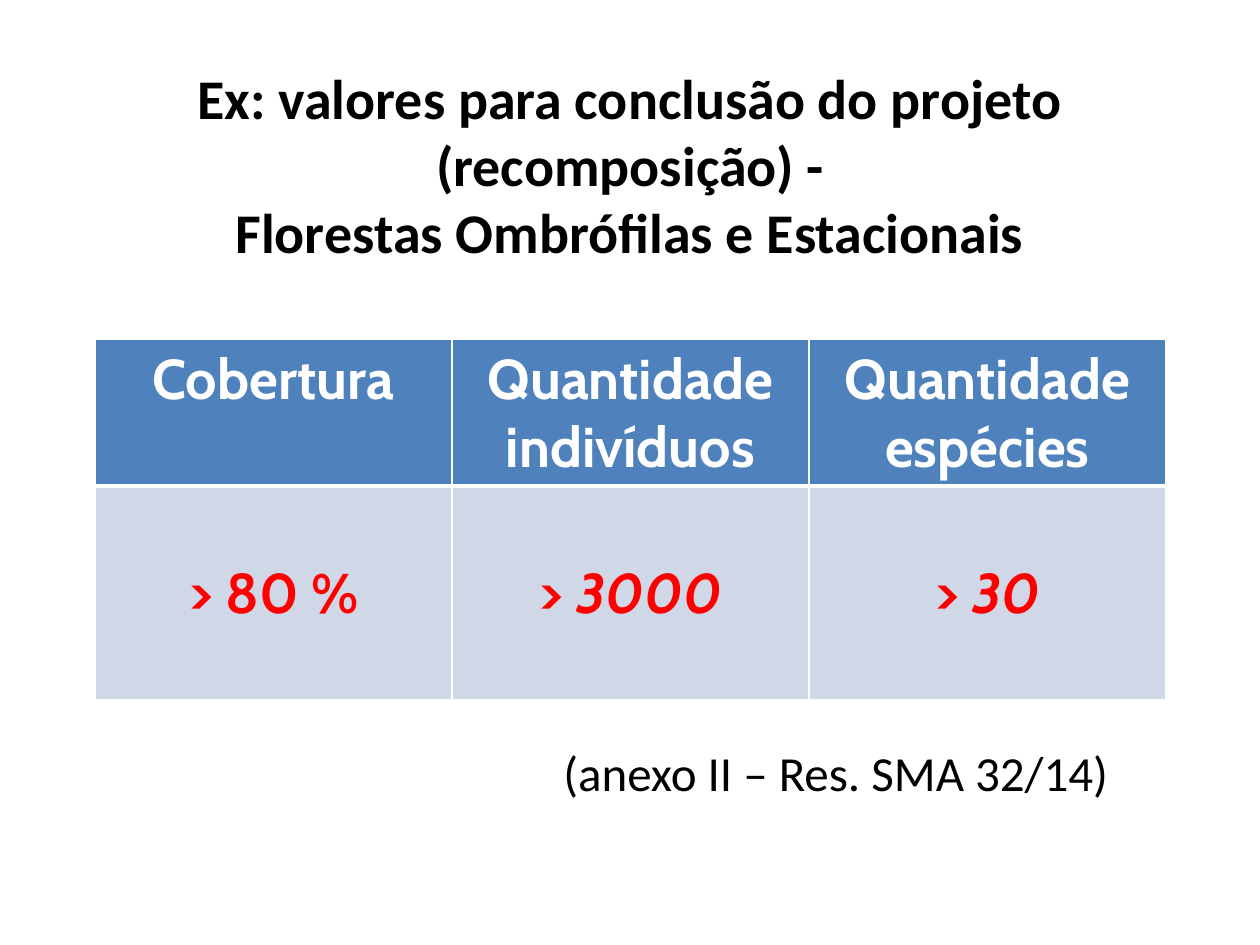
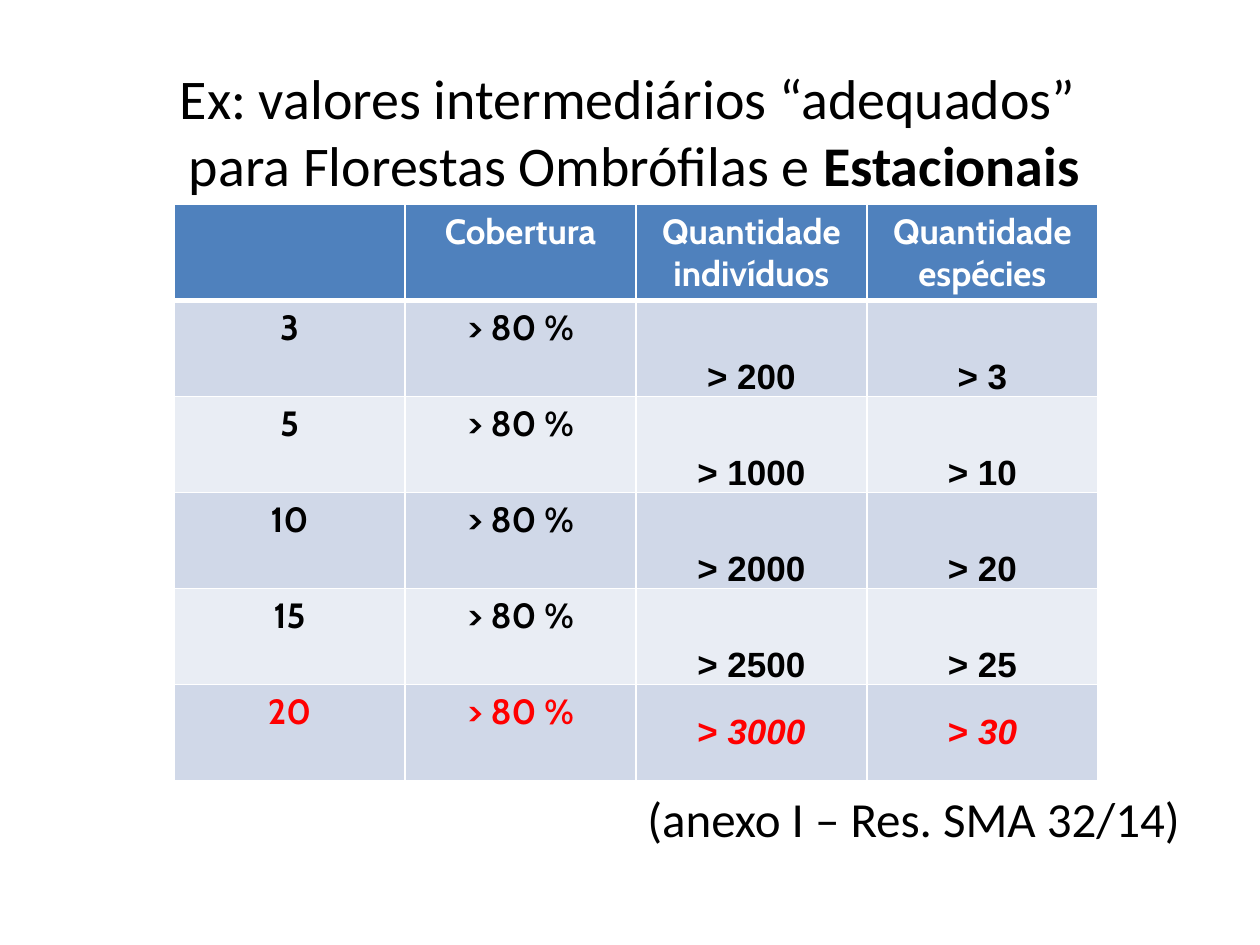
"""Build two slides of reference values for forest restoration projects."""
from dataclasses import dataclass

import pptx
import pptx.dml.color
import pptx.enum.text
import pptx.oxml
import pptx.oxml.ns
import pptx.util

EMU_PER_PX = 914400 / 126
COLORS = {
    "text": "000000",
    "goal": "FF0000",
    "header": "4F81BD",
    "header_text": "FFFFFF",
    "border": "FFFFFF",
    "band_odd": "D0D8E8",
    "band_even": "E9EDF4",
}
TITLE_SIZE, NOTE_SIZE = 32, 28
TEXT_FONT, TABLE_FONT = "Calibri", "Cabin"
CENTER = pptx.enum.text.PP_ALIGN.CENTER
LEFT = pptx.enum.text.PP_ALIGN.LEFT
ANCHOR = pptx.enum.text.MSO_ANCHOR


@dataclass(frozen=True)
class Style:
    """Look of a stretch of text."""
    size: int
    font: str = TEXT_FONT
    color: str = "text"
    bold: bool = False


@dataclass(frozen=True)
class Line:
    """One paragraph, with an optional emphasised ending."""
    text: str
    ending: str = ""


@dataclass(frozen=True)
class TextBlock:
    """A text box in px."""
    left: int
    top: int
    width: int
    height: int
    lines: tuple[Line, ...]
    style: Style
    align: pptx.enum.text.PP_ALIGN = LEFT


@dataclass(frozen=True)
class ValueTable:
    """A table in px whose last row holds the final goals."""
    left: int
    top: int
    column_width: int
    row_heights: tuple[int, ...]
    rows: tuple[tuple[str, ...], ...]
    size: int
    first_value_column: int
    value_font: str
    label_anchor: pptx.enum.text.MSO_ANCHOR


def px(length: int) -> int:
    """Turn px into EMU."""
    return round(length * EMU_PER_PX)


def rgb(name: str) -> pptx.dml.color.RGBColor:
    """Look up a named colour."""
    return pptx.dml.color.RGBColor.from_string(COLORS[name])


def format_span(span, style: Style) -> None:
    """Apply a style to a run."""
    span.font.size = pptx.util.Pt(style.size)
    span.font.name = style.font
    span.font.bold = style.bold
    span.font.italic = False
    span.font.color.rgb = rgb(style.color)


def write_line(para, line: Line, style: Style, align, emphasis: str = "bold") -> None:
    """Write a paragraph and emphasise its ending."""
    para.text = line.text
    para.alignment = align
    if line.ending:
        para.add_run().text = line.ending
    for span in para.runs:
        format_span(span, style)
    if line.ending:
        setattr(para.runs[-1].font, emphasis, True)


def draw_text(page, block: TextBlock) -> None:
    """Draw a text box."""
    box = page.shapes.add_textbox(
        px(block.left), px(block.top), px(block.width), px(block.height))
    frame = box.text_frame
    frame.word_wrap = True
    frame.auto_size = pptx.enum.text.MSO_AUTO_SIZE.SHAPE_TO_FIT_TEXT
    for index, line in enumerate(block.lines):
        para = frame.add_paragraph() if index else frame.paragraphs[0]
        write_line(para, line, block.style, block.align)


def draw_borders(cell, row: int) -> None:
    """Line a cell, with a thick rule under the header."""
    points = {"L": 1, "R": 1, "T": 3 if row == 1 else 1, "B": 3 if row == 0 else 1}
    properties = cell._tc.get_or_add_tcPr()
    for side, width in points.items():
        properties.append(pptx.oxml.parse_xml(
            f'<a:ln{side} {pptx.oxml.ns.nsdecls("a")} w="{pptx.util.Pt(width)}">'
            f'<a:solidFill><a:srgbClr val="{COLORS["border"]}"/></a:solidFill>'
            f'</a:ln{side}>'))


def draw_cell(cell, table: ValueTable, row: int, column: int) -> None:
    """Fill and write one cell by its place in the table."""
    is_header = row == 0
    is_goal = row == len(table.rows) - 1
    is_value = not is_header and column >= table.first_value_column
    draw_borders(cell, row)
    band = "header" if is_header else "band_odd" if row % 2 else "band_even"
    cell.fill.solid()
    cell.fill.fore_color.rgb = rgb(band)
    if is_value:
        cell.margin_left = cell.margin_right = pptx.util.Inches(0.05)
        cell.margin_top = cell.margin_bottom = 0
        cell.vertical_anchor = ANCHOR.MIDDLE if is_goal else ANCHOR.BOTTOM
    else:
        cell.vertical_anchor = ANCHOR.TOP if is_header else table.label_anchor
    text = table.rows[row][column]
    line = Line(text[:2], text[2:]) if is_value and is_goal else Line(text)
    color = "header_text" if is_header else "goal" if is_goal else "text"
    font = table.value_font if is_value else TABLE_FONT
    style = Style(table.size, font, color, bold=True)
    write_line(cell.text_frame.paragraphs[0], line, style, CENTER, "italic")


def draw_table(page, table: ValueTable) -> None:
    """Draw a table of values."""
    columns = len(table.rows[0])
    grid = page.shapes.add_table(
        len(table.rows), columns, px(table.left), px(table.top),
        px(columns * table.column_width), px(sum(table.row_heights))).table
    for column in grid.columns:
        column.width = px(table.column_width)
    for row, height in enumerate(table.row_heights):
        grid.rows[row].height = px(height)
        for column in range(columns):
            draw_cell(grid.cell(row, column), table, row, column)


HEADINGS = ("Cobertura", "Quantidade indivíduos", "Quantidade espécies")
COVERAGE = "> 80 %"
STAGES = ((3, 200, 3), (5, 1000, 10), (10, 2000, 20), (15, 2500, 25), (20, 3000, 30))
NOTE_STYLE = Style(NOTE_SIZE)

SLIDES = (
    (
        TextBlock(0, 57, 1260, 223, (
            Line("Ex: valores para conclusão do projeto (recomposição) -"),
            Line("Florestas Ombrófilas e Estacionais"),
        ), Style(TITLE_SIZE, bold=True), CENTER),
        ValueTable(95, 339, 357, (147, 214),
                   (HEADINGS, (COVERAGE, "> 3000", "> 30")),
                   32, 1, TABLE_FONT, ANCHOR.MIDDLE),
        TextBlock(551, 736, 615, 72, (Line("(anexo II – Res. SMA 32/14)"),), NOTE_STYLE),
    ),
    (
        TextBlock(39, 57, 1191, 149, (
            Line("Ex: valores intermediários “adequados” "),
            Line("para Florestas Ombrófilas e ", "Estacionais"),
        ), Style(TITLE_SIZE), CENTER),
        ValueTable(174, 204, 231, (96,) * (len(STAGES) + 1),
                   (("", *HEADINGS),
                    *((str(year), COVERAGE, f"> {plants}", f"> {species}")
                      for year, plants, species in STAGES)),
                   20, 2, "Arial", ANCHOR.TOP),
        TextBlock(635, 782, 615, 72, (Line("(anexo I – Res. SMA 32/14)"),), NOTE_STYLE),
    ),
)


def main() -> None:
    """Build and save the deck."""
    deck = pptx.Presentation()
    deck.slide_width, deck.slide_height = px(1260), px(945)
    for items in SLIDES:
        page = deck.slides.add_slide(deck.slide_layouts[6])
        for item in items:
            draw = draw_table if isinstance(item, ValueTable) else draw_text
            draw(page, item)
    deck.save("out.pptx")


if __name__ == "__main__":
    main()
